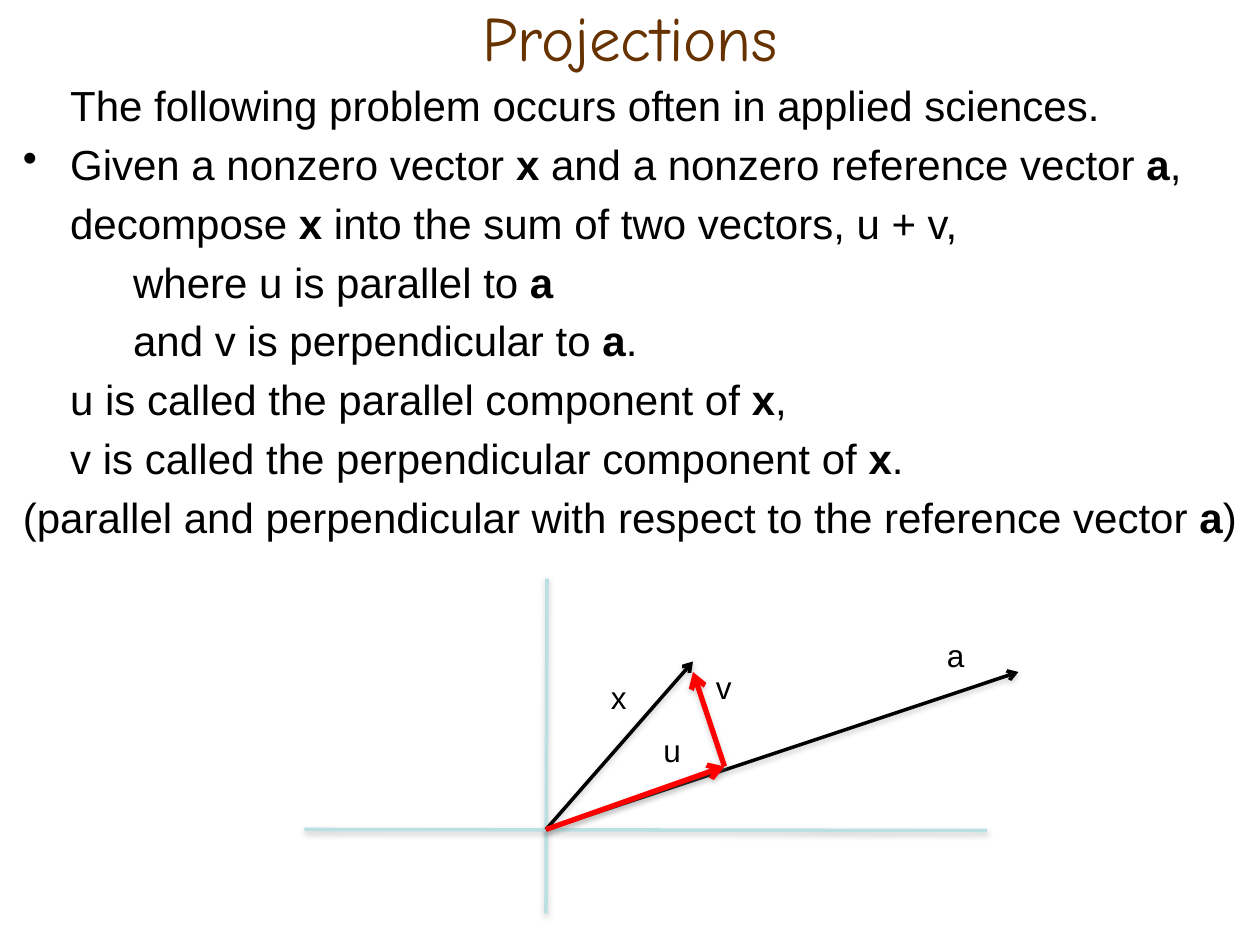
from lxml import etree
from pptx import Presentation
from pptx.dml.color import RGBColor
from pptx.enum.shapes import MSO_CONNECTOR
from pptx.enum.text import MSO_ANCHOR, PP_ALIGN
from pptx.oxml import parse_xml
from pptx.oxml.ns import nsdecls, qn
from pptx.util import Pt

PX = 7620
COLORS = {"title": "663300", "text": "000000", "axis": "BBE0E3",
          "part": "FF0000", "shadow": "808080"}
OUTLINE = (f'<a:ln {nsdecls("a")} w="9525"><a:solidFill>'
           f'<a:srgbClr val="{COLORS["part"]}"/></a:solidFill></a:ln>')
SHADOW = (f'<a:effectLst {nsdecls("a")}>'
          '<a:outerShdw blurRad="40000" dist="20000" dir="5400000" rotWithShape="0">'
          f'<a:srgbClr val="{COLORS["shadow"]}"><a:alpha val="38000"/></a:srgbClr>'
          '</a:outerShdw></a:effectLst>')


def add_text(p, text, size=18, font="Arial", color="text", bold_names=()):
    for part in text.split("|"):
        r = p.add_run()
        r.text = part
        r.font.size = Pt(size)
        r.font.name = font
        r.font.bold = part.strip() in bold_names
        r.font.color.rgb = RGBColor.from_string(COLORS[color])
        if part in ("u", "v"):
            r.font._element.insert(0, parse_xml(OUTLINE))


def add_box(x, y, w, h):
    tf = s.shapes.add_textbox(x * PX, y * PX, w * PX, h * PX).text_frame
    tf.word_wrap = True
    return tf


prs = Presentation()
prs.slide_width = 1200 * PX
prs.slide_height = 900 * PX
s = prs.slides.add_slide(prs.slide_layouts[6])

tf = add_box(60, 0, 1080, 70)
tf.vertical_anchor = MSO_ANCHOR.MIDDLE
tf.paragraphs[0].alignment = PP_ALIGN.CENTER
add_text(tf.paragraphs[0], "Projections", size=36, font="Comic Neue", color="title")

body = [
    "\tThe following problem occurs often in applied sciences.",
    "Given a nonzero vector |x| and a nonzero reference vector |a|,",
    "\tdecompose |x |into the sum of two vectors, |u| + |v|,",
    "\t\twhere |u| is parallel to |a",
    "\t\tand |v| is perpendicular to |a|.",
    "\t|u| is called the parallel component of |x|,",
    "\t|v| is called the perpendicular component of |x|.",
    "(parallel and perpendicular with respect to the reference vector |a|)",
]
tf = add_box(10, 70, 1190, 430)
for i, text in enumerate(body):
    p = tf.paragraphs[0] if i == 0 else tf.add_paragraph()
    pPr = p._p.get_or_add_pPr()
    pPr.set("marL", str(45 * PX))
    pPr.set("indent", str(-45 * PX))
    spacing = etree.SubElement(pPr, qn("a:spcBef"))
    etree.SubElement(spacing, qn("a:spcPct")).set("val", "20000")
    if text.startswith("Given"):
        etree.SubElement(pPr, qn("a:buChar")).set("char", "•")
    else:
        etree.SubElement(pPr, qn("a:buNone"))
    add_text(p, text, size=24, bold_names=("x", "a"))

origin, foot = (520, 790), (690, 730)
lines = [
    ((521, 551), (520, 870), "axis", 2, False),
    ((290, 790), (940, 791), "axis", 2, False),
    (origin, (660, 630), "text", 2, True),
    (origin, (970, 640), "text", 2, True),
    (foot, (660, 640), "part", 3, True),
    (origin, foot, "part", 3, True),
]
for (x1, y1), (x2, y2), color, width, arrow in lines:
    c = s.shapes.add_connector(MSO_CONNECTOR.STRAIGHT, x1 * PX, y1 * PX, x2 * PX, y2 * PX)
    c.line.color.rgb = RGBColor.from_string(COLORS[color])
    c.line.width = Pt(width)
    if arrow:
        etree.SubElement(c.line._get_or_add_ln(), qn("a:tailEnd")).set("type", "arrow")
    c._element.spPr.append(parse_xml(SHADOW))

labels = [("x", 570, 640, 30, 85), ("v", 670, 630, 40, 48),
          ("a", 890, 600, 50, 48), ("u", 620, 690, 50, 48)]
for text, x, y, w, h in labels:
    add_text(add_box(x, y, w, h).paragraphs[0], text)

prs.save("out.pptx")
